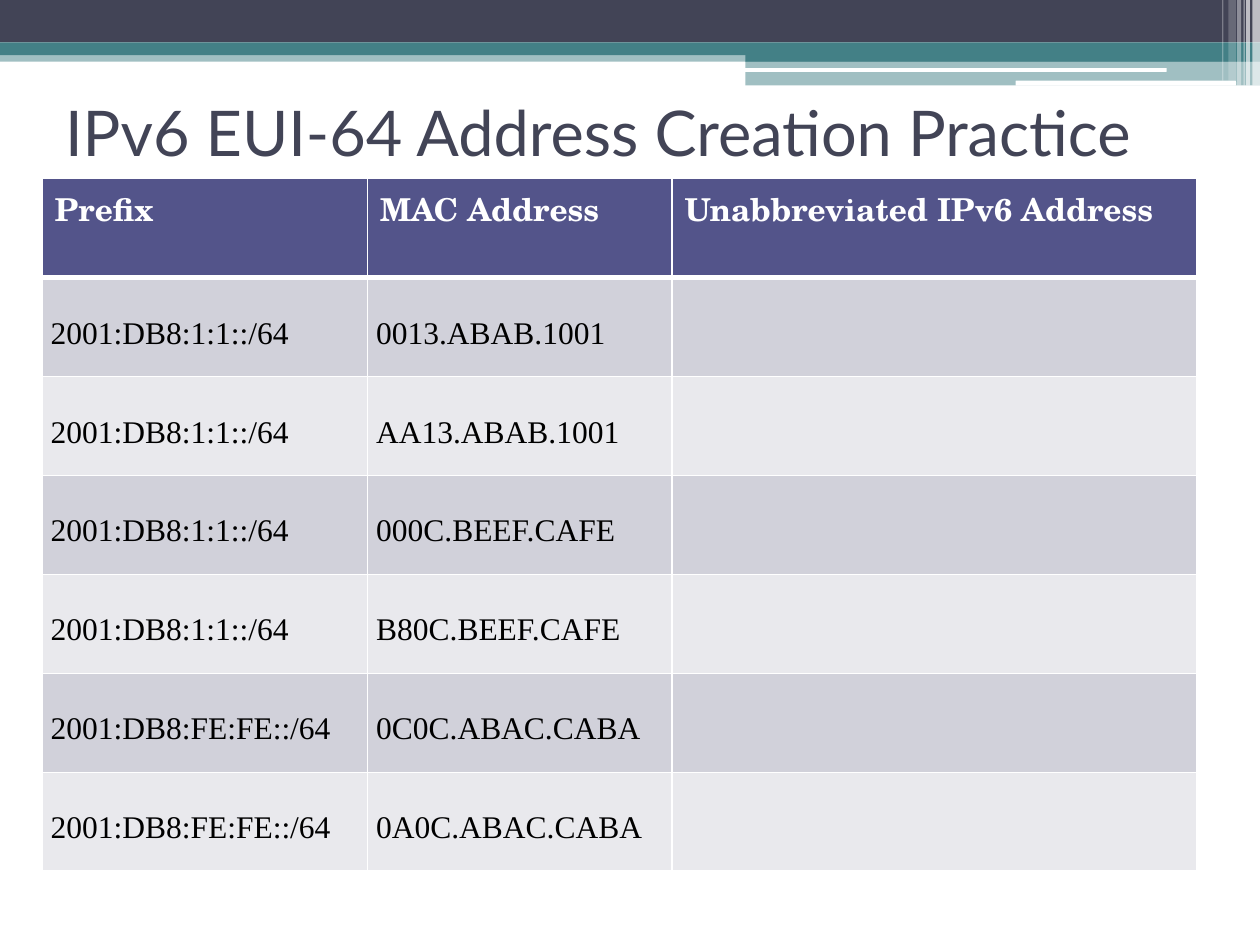
"""Build a practice slide for IPv6 EUI-64 addresses."""
from lxml.etree import SubElement
from pptx import Presentation
from pptx.dml.color import RGBColor
from pptx.enum.shapes import MSO_SHAPE
from pptx.enum.text import MSO_ANCHOR, MSO_AUTO_SIZE, PP_ALIGN
from pptx.oxml.ns import qn
from pptx.util import Pt

WHITE = RGBColor(0xFF, 0xFF, 0xFF)
BLACK = RGBColor(0, 0, 0)
SLATE = RGBColor(0x42, 0x44, 0x56)
TEAL = RGBColor(0x43, 0x80, 0x86)
INDIGO = RGBColor(0x53, 0x54, 0x8A)
BANDS = RGBColor(0xD1, 0xD1, 0xDA), RGBColor(0xE9, 0xE9, 0xED)

TITLE = {"name": "Lato", "size": Pt(36), "bold": False}
HEAD = {"name": "TeX Gyre Schola", "size": Pt(18), "bold": True}
BODY = {"name": "Times New Roman", "size": Pt(18), "bold": False}
INSET = {"margin_left": Pt(5), "margin_right": Pt(5),
         "margin_top": Pt(22), "margin_bottom": Pt(0)}
FRAME = {"vertical_anchor": MSO_ANCHOR.MIDDLE, "word_wrap": True,
         "auto_size": MSO_AUTO_SIZE.NONE}

BARS = [
    (0, 28.8, 720, 6.5, TEAL, 50),
    (0, 0, 720, 24.3, SLATE, 100),
    (0, 24.3, 720, 7.2, TEAL, 100),
    (426, 28, 294, 7.2, TEAL, 100),
    (426, 34.8, 294, 14, TEAL, 50),
]
PILLS = [(425.5, 38.9, 241.2, 2.2), (580.3, 46.1, 126, 2.9)]
STRIPES = [
    (715.7, 4.3, 49, 65),
    (712.1, 2.2, 49, 65),
    (710.6, 0.7, 49, 60),
    (707, 2.2, 49, 40),
    (702, 4.3, 46.1, 20),
    (698.4, 0.7, 46.1, 30),
]
NEAR = "2001:DB8:1:1::/64"
FAR = "2001:DB8:FE:FE::/64"
ROWS = [
    ("Prefix", "MAC Address", "Unabbreviated IPv6 Address"),
    (NEAR, "0013.ABAB.1001", ""),
    (NEAR, "AA13.ABAB.1001", ""),
    (NEAR, "000C.BEEF.CAFE", ""),
    (NEAR, "B80C.BEEF.CAFE", ""),
    (FAR, "0C0C.ABAC.CABA", ""),
    (FAR, "0A0C.ABAC.CABA", ""),
]
WIDTHS = 186, 174, 300
HIGH = 56.57


def apply(item, values):
    """Set each named value on the item."""
    for name, value in values.items():
        setattr(item, name, value)


class Deck:
    """Hold the style and the current slide."""

    def __init__(self):
        """Open a blank deck with one titled slide."""
        self.deck = Presentation()
        apply(self.deck, {"slide_width": Pt(720), "slide_height": Pt(540)})
        self.slide = self.deck.slides.add_slide(self.deck.slide_layouts[5])

    def bar(self, x, y, w, h, color, alpha=100, kind=MSO_SHAPE.RECTANGLE):
        """Draw a plain filled bar."""
        bar = self.slide.shapes.add_shape(kind, Pt(x), Pt(y), Pt(w), Pt(h))
        bar.shadow.inherit = False
        bar.fill.solid()
        bar.fill.fore_color.rgb = color
        bar.line.fill.background()
        if alpha < 100:
            tint = bar._element.spPr.find(".//" + qn("a:srgbClr"))
            SubElement(tint, qn("a:alpha"), val=str(alpha * 1000))

    def label(self, frame, text, font, color):
        """Add left-aligned text in one style."""
        line = frame.paragraphs[0]
        line.alignment = PP_ALIGN.LEFT
        run = line.add_run()
        run.text = text
        apply(run.font, font)
        run.font.color.rgb = color

    def title(self, text, x, y, w, h):
        """Place the title above the bars."""
        title = self.slide.shapes.title
        apply(title, {"left": Pt(x), "top": Pt(y), "width": Pt(w), "height": Pt(h)})
        apply(title.text_frame, FRAME)
        self.label(title.text_frame, text, TITLE, SLATE)
        self.slide.shapes._spTree.append(title._element)

    def edge(self, cell, side, width):
        """Add one white border to a cell."""
        line = SubElement(cell._tc.get_or_add_tcPr(), qn("a:ln" + side), w=str(Pt(width)))
        fill = SubElement(line, qn("a:solidFill"))
        SubElement(fill, qn("a:srgbClr"), val=str(WHITE))

    def cell(self, cell, text, row):
        """Style and fill one table cell."""
        head = row == 0
        for side in "LRTB":
            thick = (head and side == "B") or (row == 1 and side == "T")
            self.edge(cell, side, 3 if thick else 1)
        cell.fill.solid()
        cell.fill.fore_color.rgb = INDIGO if head else BANDS[(row - 1) % 2]
        if text:
            apply(cell, {} if head else INSET)
            self.label(cell.text_frame, text, HEAD if head else BODY,
                       WHITE if head else BLACK)

    def table(self, rows, widths, high, x, y):
        """Draw a banded table with a header row."""
        table = self.slide.shapes.add_table(
            len(rows), len(widths), Pt(x), Pt(y),
            Pt(sum(widths)), Pt(high * len(rows))).table
        for col, width in zip(table.columns, widths):
            col.width = Pt(width)
        for r, row in enumerate(rows):
            table.rows[r].height = Pt(high)
            for c, text in enumerate(row):
                self.cell(table.cell(r, c), text, r)


def main():
    """Build and save the slide."""
    deck = Deck()
    for bar in BARS:
        deck.bar(*bar)
    for pill in PILLS:
        deck.bar(*pill, WHITE, kind=MSO_SHAPE.ROUNDED_RECTANGLE)
    for x, w, h, alpha in STRIPES:
        deck.bar(x, 0, w, h, WHITE, alpha)
    deck.title("IPv6 EUI-64 Address Creation Practice", 30, 48, 648, 54)
    deck.table(ROWS, WIDTHS, HIGH, 24, 102)
    deck.deck.save("out.pptx")


if __name__ == "__main__":
    main()
